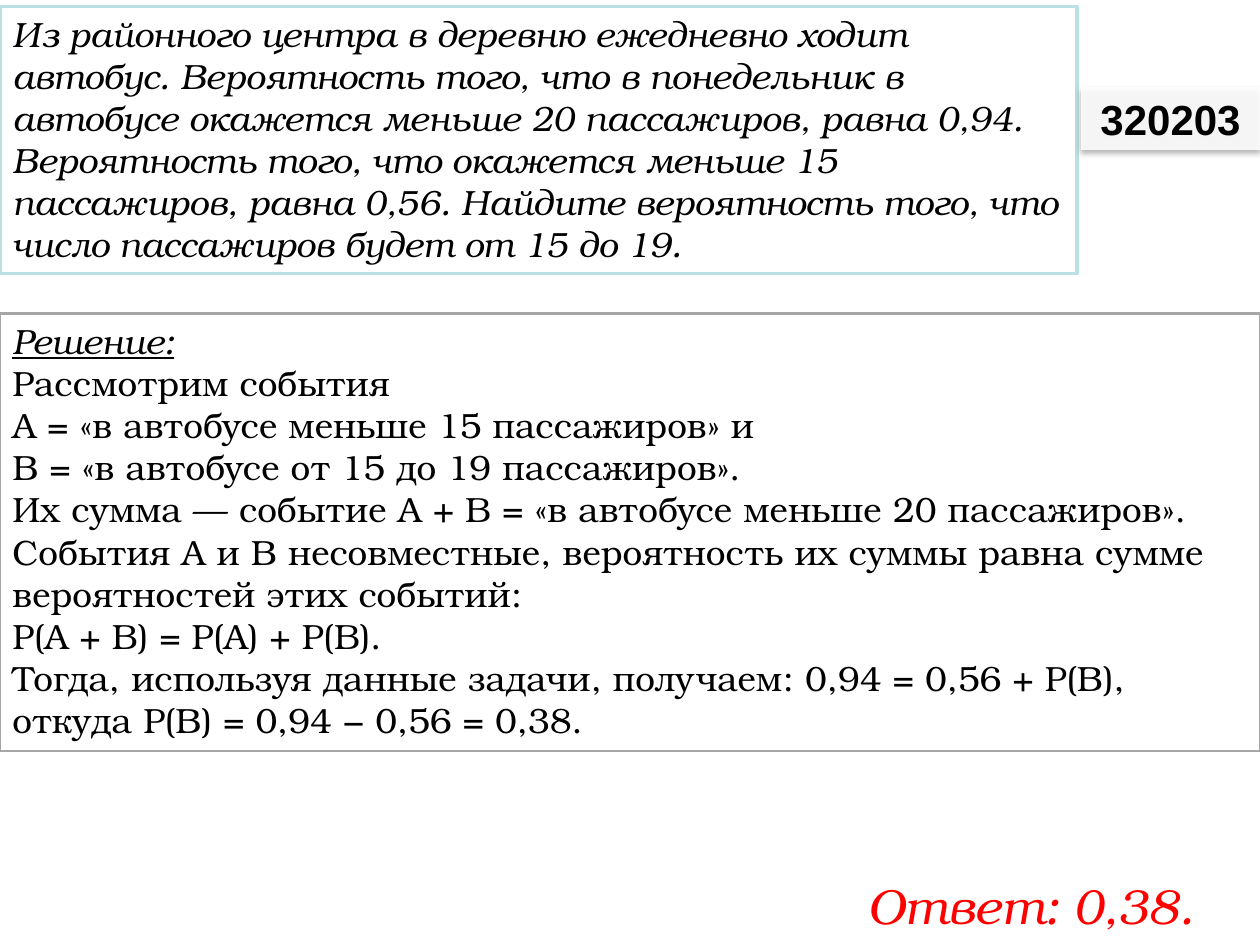
from lxml.etree import SubElement
from pptx import Presentation
from pptx.dml.color import RGBColor as RGB
from pptx.enum.shapes import MSO_SHAPE as Shape
from pptx.enum.text import MSO_ANCHOR as Anchor, MSO_AUTO_SIZE as AutoSize, PP_ALIGN as Align
from pptx.oxml.ns import qn
from pptx.util import Inches, Pt

# Content
TASK = ["Из районного центра в деревню ежедневно ходит автобус. Вероятность того, "
        "что в понедельник в автобусе окажется меньше 20 пассажиров, равна 0,94. "
        "Вероятность того, что окажется меньше 15 пассажиров, равна 0,56. "
        "Найдите вероятность того, что число пассажиров будет от 15 до 19."]
SOLUTION = [
    "Решение:",
    "Рассмотрим события",
    "A = «в автобусе меньше 15 пассажиров» и",
    "В = «в автобусе от 15 до 19 пассажиров».",
    "Их сумма — событие A + B = «в автобусе меньше 20 пассажиров». "
    "События A и В несовместные, вероятность их суммы равна сумме "
    "вероятностей этих событий:",
    "P(A + B) = P(A) + P(B).",
    "Тогда, используя данные задачи, получаем: 0,94 = 0,56 + P(В), "
    "откуда P(В) = 0,94 − 0,56 = 0,38.",
]
ANSWER = ["Ответ: 0,38."]
NUMBER = ["320203"]

THEME = {
    "serif": "TeX Gyre Bonum", "sans": "Arial",
    "body": 20, "number": 24, "answer": 28,
    "ink": "000000", "accent": "FF0000", "panel": "FFFFFF",
    "solution_edge": "A6A6A6", "task_edge": "BBE0E3",
}


def write(box, lines, size, font="serif", color="ink", align=Align.LEFT,
          italic=False, bold=False):
    frame = box.text_frame
    frame.word_wrap = True
    frame.text = "\n".join(lines)
    for paragraph in frame.paragraphs:
        paragraph.alignment = align
        for run in paragraph.runs:
            run.font.name = THEME[font]
            run.font.size = Pt(THEME[size])
            run.font.color.rgb = RGB.from_string(THEME[color])
            run.font.italic, run.font.bold = italic, bold
    return frame


def add_panel(slide, place, opacity, edge=None, width=0):
    panel = slide.shapes.add_shape(Shape.RECTANGLE, *map(Inches, place))
    panel.shadow.inherit = False
    panel.fill.solid()
    panel.fill.fore_color.rgb = RGB.from_string(THEME["panel"])
    color = panel.fill._xPr.find(qn("a:solidFill"))[0]
    SubElement(color, qn("a:alpha"), val=str(opacity * 1000))
    if edge:
        panel.line.color.rgb = RGB.from_string(THEME[edge])
        panel.line.width = Pt(width)
    else:
        panel.line.fill.background()
    panel.text_frame.vertical_anchor = Anchor.TOP
    return panel


def drop_shadow(panel, opacity, blur, distance, angle):
    effects = panel._element.spPr.find(qn("a:effectLst"))
    shadow = SubElement(effects, qn("a:outerShdw"), blurRad=str(Pt(blur)),
                        dist=str(Pt(distance)), dir=str(angle * 60000), rotWithShape="0")
    color = SubElement(shadow, qn("a:srgbClr"), val=THEME["ink"])
    SubElement(color, qn("a:alpha"), val=str(opacity * 1000))


def main():
    deck = Presentation()
    deck.slide_width, deck.slide_height = Inches(10), Inches(7.5)
    slide = deck.slides.add_slide(deck.slide_layouts[6])

    # Solution, with an underlined italic heading
    solution = add_panel(slide, (0, 2.49, 10, 3.47), 72, "solution_edge", 1.5)
    frame = write(solution, SOLUTION, "body")
    heading = frame.paragraphs[0].runs[0].font
    heading.italic = heading.underline = True

    # Task
    task = add_panel(slide, (0, 0.05, 8.55, 2.12), 86, "task_edge", 2)
    write(task, TASK, "body", italic=True)

    # Answer
    answer = slide.shapes.add_textbox(*map(Inches, (6.36, 6.9, 3.64, 0.57)))
    write(answer, ANSWER, "answer", color="accent", align=Align.CENTER, italic=True)

    for box in (solution, task, answer):
        box.text_frame.auto_size = AutoSize.SHAPE_TO_FIT_TEXT

    # Task number
    number = add_panel(slide, (8.58, 0.69, 1.42, 0.5), 87)
    drop_shadow(number, opacity=32, blur=3.5, distance=2.2, angle=90)
    write(number, NUMBER, "number", font="sans", align=Align.CENTER, bold=True)
    number.text_frame.vertical_anchor = Anchor.MIDDLE

    deck.save("out.pptx")


if __name__ == "__main__":
    main()
